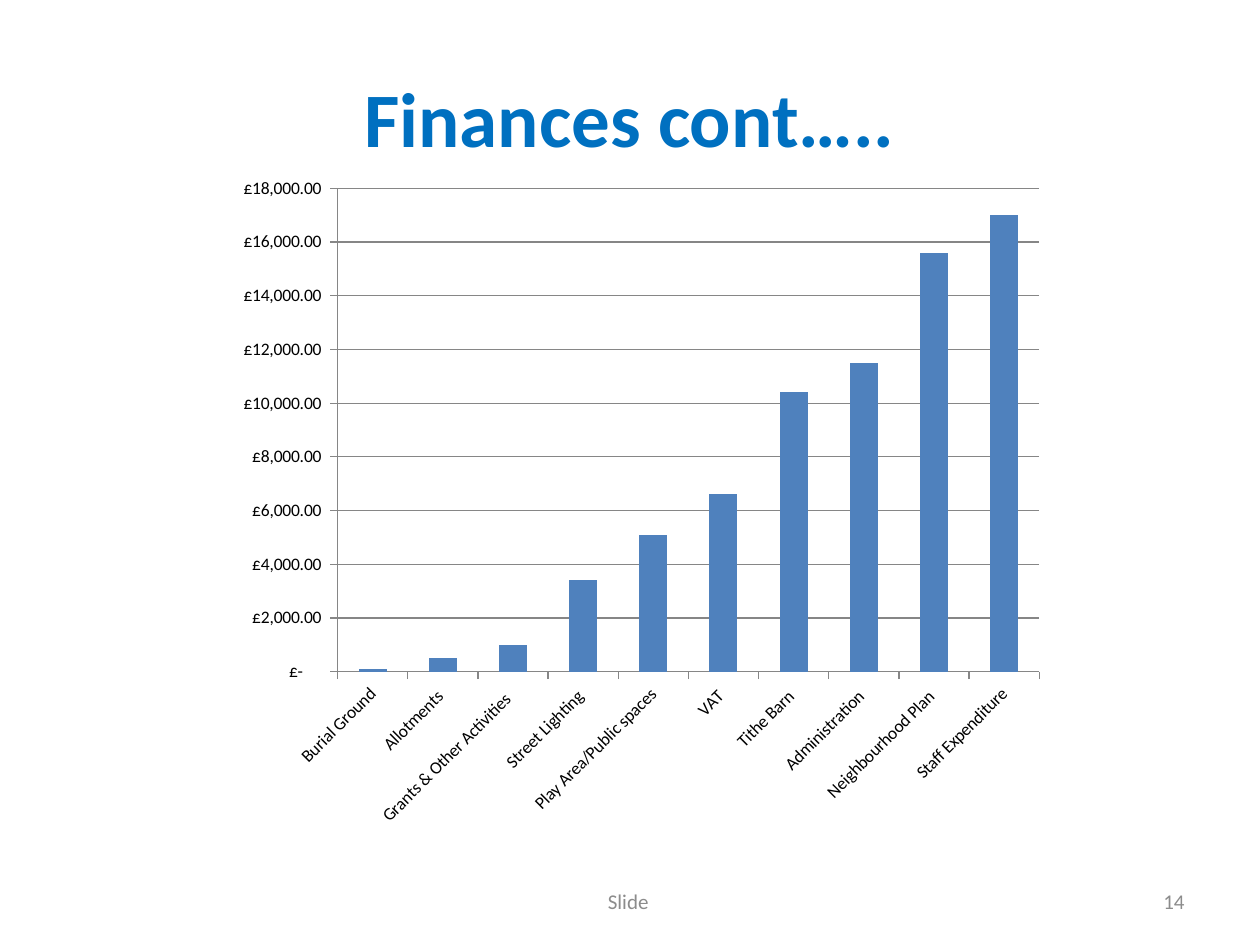
import pptx
import pptx.chart.data
import pptx.dml.color
import pptx.enum.chart
import pptx.enum.text
import pptx.util
from pptx.util import Inches

COLORS = {"title": "0070C0", "footer": "8C8C8C", "bar": "4F81BD",
          "line": "868686", "label": "000000"}
FONT = "Calibri"
POUNDS = '_("£"* #,##0.00_);_("£"* \\(#,##0.00\\);_("£"* "-"??_);_(@_)'
SPENDING = {
    "Burial Ground": 100,
    "Allotments ": 500,
    "Grants & Other Activities  ": 1000,
    "Street Lighting ": 3400,
    "Play Area/Public spaces": 5100,
    "VAT ": 6600,
    "Tithe Barn ": 10400,
    "Administration ": 11500,
    "Neighbourhood Plan ": 15600,
    "Staff Expenditure": 17000,
}
ALIGN = pptx.enum.text.PP_ALIGN


def rgb(name):
    return pptx.dml.color.RGBColor.from_string(COLORS[name])


def write_line(shape, text, size, color, alignment, bold=False):
    """Fill a shape with one formatted, vertically centred line."""
    frame = shape.text_frame
    frame.word_wrap = True
    frame.vertical_anchor = pptx.enum.text.MSO_ANCHOR.MIDDLE
    paragraph = frame.paragraphs[0]
    paragraph.alignment = alignment
    run = paragraph.add_run()
    run.text = text
    run.font.name = FONT
    run.font.size = pptx.util.Pt(size)
    run.font.bold = bold
    run.font.color.rgb = rgb(color)


presentation = pptx.Presentation()
presentation.slide_width = Inches(10)
presentation.slide_height = Inches(7.5)
slide = presentation.slides.add_slide(presentation.slide_layouts[5])

# Title
title = slide.shapes.title
title.left, title.top = Inches(0.5), Inches(0.3)
title.width, title.height = Inches(9), Inches(1.25)
write_line(title, "Finances cont…..", 44, "title", ALIGN.CENTER, bold=True)

# Footer and slide number
for text, left, width, alignment in [
    ("Slide ", 3.42, 3.17, ALIGN.CENTER),
    ("14", 7.17, 2.33, ALIGN.RIGHT),
]:
    footer = slide.shapes.add_textbox(
        Inches(left), Inches(6.95), Inches(width), Inches(0.4))
    write_line(footer, text, 12, "footer", alignment)

# Spending chart
chart_data = pptx.chart.data.CategoryChartData()
chart_data.categories = list(SPENDING)
chart_data.add_series("Series 1", list(SPENDING.values()))
chart = slide.shapes.add_chart(
    pptx.enum.chart.XL_CHART_TYPE.COLUMN_CLUSTERED,
    Inches(1.77), Inches(1.31), Inches(6.61), Inches(5.35), chart_data).chart
chart.has_legend = False
chart.has_title = False
chart.font.name = FONT
chart.font.size = pptx.util.Pt(10)
chart.font.color.rgb = rgb("label")

plot = chart.plots[0]
plot.gap_width = 150
plot.vary_by_categories = False
bars = plot.series[0].format.fill
bars.solid()
bars.fore_color.rgb = rgb("bar")

value_axis = chart.value_axis
value_axis.minimum_scale = 0
value_axis.maximum_scale = 18000
value_axis.major_unit = 2000
value_axis.has_major_gridlines = True
value_axis.tick_labels.number_format = POUNDS
value_axis.tick_labels.number_format_is_linked = False
for axis in (chart.category_axis, value_axis):
    axis.major_tick_mark = pptx.enum.chart.XL_TICK_MARK.OUTSIDE
for part in (chart.category_axis, value_axis, value_axis.major_gridlines):
    part.format.line.color.rgb = rgb("line")
    part.format.line.width = pptx.util.Pt(0.75)

presentation.save("out.pptx")
